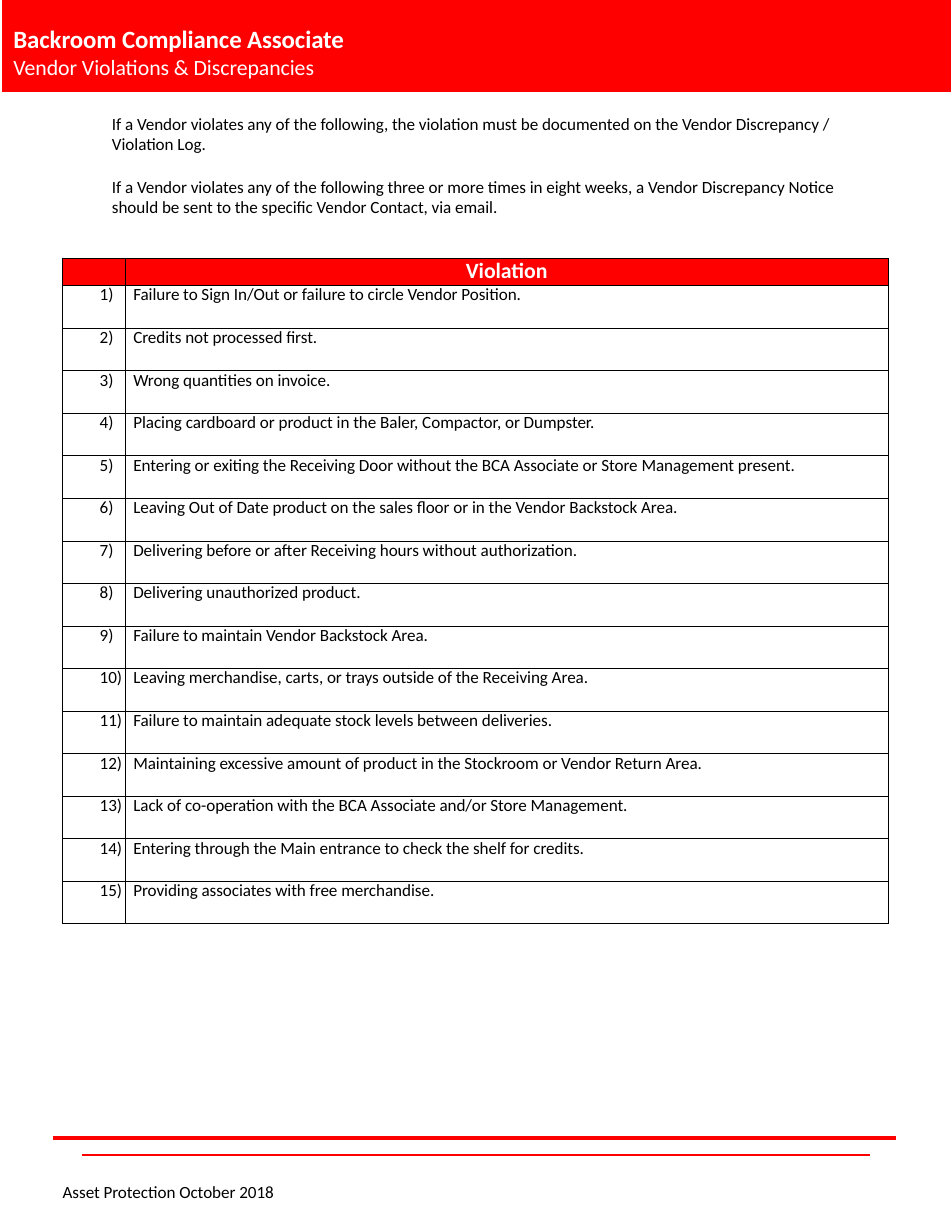
import pptx
import pptx.dml.color
import pptx.enum.shapes
import pptx.enum.text
import pptx.oxml.ns
import pptx.util
from lxml import etree

PX = 9144  # one px is a hundredth of an inch
RED, WHITE, BLACK = "FF0000", "FFFFFF", "000000"
LEFT = pptx.enum.text.PP_ALIGN.LEFT
CENTER = pptx.enum.text.PP_ALIGN.CENTER

INTRO = [
    "If a Vendor violates any of the following, the violation must be documented "
    "on the Vendor Discrepancy / Violation Log.",
    "If a Vendor violates any of the following three or more times in eight weeks, "
    "a Vendor Discrepancy Notice should be sent to the specific Vendor Contact, via email.",
]
VIOLATIONS = [
    "Failure to Sign In/Out or failure to circle Vendor Position.",
    "Credits not processed first.",
    "Wrong quantities on invoice.",
    "Placing cardboard or product in the Baler, Compactor, or Dumpster.",
    "Entering or exiting the Receiving Door without the BCA Associate or Store Management present.",
    "Leaving Out of Date product on the sales floor or in the Vendor Backstock Area.",
    "Delivering before or after Receiving hours without authorization.",
    "Delivering unauthorized product.",
    "Failure to maintain Vendor Backstock Area.",
    "Leaving merchandise, carts, or trays outside of the Receiving Area.",
    "Failure to maintain adequate stock levels between deliveries.",
    "Maintaining excessive amount of product in the Stockroom or Vendor Return Area.",
    "Lack of co-operation with the BCA Associate and/or Store Management.",
    "Entering through the Main entrance to check the shelf for credits.",
    "Providing associates with free merchandise.",
]


def px(*lengths):
    return [pptx.util.Emu(length * PX) for length in lengths]


def rgb(color):
    return pptx.dml.color.RGBColor.from_string(color)


def format_paragraph(para, size, color, bold=False, align=LEFT, indent=0):
    para.alignment = align
    properties = para._p.get_or_add_pPr()
    properties.set("marL", str(indent * PX))
    properties.set("indent", "0")
    font = para.font
    font.name, font.size, font.bold = "Calibri", pptx.util.Pt(size), bold
    font.color.rgb = rgb(color)
    # Slightly tightened letter spacing
    properties.find(pptx.oxml.ns.qn("a:defRPr")).set("spc", "-5")


def prepare_frame(frame):
    frame.word_wrap = True
    frame.auto_size = pptx.enum.text.MSO_AUTO_SIZE.NONE
    frame.vertical_anchor = pptx.enum.text.MSO_ANCHOR.TOP
    frame.margin_left, frame.margin_top = px(1, 2)
    frame.margin_right = frame.margin_bottom = 0


def add_text(page, box, lines, gap=0):
    frame = page.shapes.add_textbox(*px(*box)).text_frame
    prepare_frame(frame)
    frame.text = "\n".join(lines)
    for number, para in enumerate(frame.paragraphs):
        if number:
            para.space_before = pptx.util.Pt(gap)
        format_paragraph(para, 11, BLACK)


def add_rule(page, left, top, width, weight):
    rule = page.shapes.add_connector(
        pptx.enum.shapes.MSO_CONNECTOR.STRAIGHT, *px(left, top, left + width, top))
    rule.line.color.rgb = rgb(RED)
    rule.line.width = pptx.util.Pt(weight)
    etree.SubElement(rule._element.spPr, pptx.oxml.ns.qn("a:effectLst"))


def add_header(page, box):
    left, top, width, height = box
    band = page.shapes.add_shape(
        pptx.enum.shapes.MSO_SHAPE.RECTANGLE, *px(*box))
    band.shadow.inherit = False
    band.fill.solid()
    band.fill.fore_color.rgb = rgb(RED)
    band.line.fill.background()

    # Title and subtitle stand in front of the band
    title = page.shapes.title
    title._element.addprevious(band._element)
    title.left, title.top, title.width, title.height = px(
        left + 9, top + 19, width - 18, height - 29)
    frame = title.text_frame
    prepare_frame(frame)
    frame.text = "Backroom Compliance Associate\nVendor Violations & Discrepancies"
    heading, subtitle = frame.paragraphs
    format_paragraph(heading, 16, WHITE, bold=True)
    format_paragraph(subtitle, 14, WHITE)


def add_borders(cell):
    properties = cell._tc.get_or_add_tcPr()
    for position, side in enumerate(("lnL", "lnR", "lnT", "lnB")):
        line = etree.Element(pptx.oxml.ns.qn("a:" + side), w="6350")
        fill = etree.SubElement(line, pptx.oxml.ns.qn("a:solidFill"))
        etree.SubElement(fill, pptx.oxml.ns.qn("a:srgbClr"), val=BLACK)
        properties.insert(position, line)


def fill_cell(cell, text, is_header, indent):
    cell.margin_left = cell.margin_right = cell.margin_top = cell.margin_bottom = 0
    cell.text = text
    para = cell.text_frame.paragraphs[0]
    if is_header:
        cell.fill.solid()
        cell.fill.fore_color.rgb = rgb(RED)
        para.line_spacing = pptx.util.Pt(16.4)
        format_paragraph(para, 14, WHITE, bold=True, align=CENTER)
    else:
        cell.fill.background()
        para.line_spacing = pptx.util.Pt(12.9)
        format_paragraph(para, 11, BLACK, indent=indent)
    add_borders(cell)


def add_violations(page, box):
    number_width, header_height, row_height = 56, 24, 38
    rows = [("", "Violation")]
    rows += [(f"{number})", text) for number, text in enumerate(VIOLATIONS, 1)]
    table = page.shapes.add_table(len(rows), 2, *px(*box)).table
    table.horz_banding = table.first_row = False
    widths = px(number_width, box[2] - number_width)
    for column, width in zip(table.columns, widths):
        column.width = width
    for index, texts in enumerate(rows):
        table.rows[index].height = px(row_height if index else header_height)[0]
        for column, (text, indent) in enumerate(zip(texts, (33, 7))):
            fill_cell(table.cell(index, column), text, index == 0, indent)


def add_footer(page, box):
    left, top, width, height = box
    add_rule(page, left, top, width, 3)
    add_rule(page, left + 26, top + 15, width - 49, 1.44)
    add_text(page, (left + 8, top + 37, 194, height - 37),
             ["Asset Protection October 2018"])


def main():
    deck = pptx.Presentation()
    deck.slide_width, deck.slide_height = px(850, 1100)
    page = deck.slides.add_slide(deck.slide_layouts.get_by_name("Title Only"))
    add_header(page, (2, 0, 847, 82))
    add_text(page, (99, 99, 653, 96), INTRO, gap=14)
    add_violations(page, (56, 231, 737, 594))
    add_footer(page, (47, 1016, 753, 58))
    deck.save("out.pptx")


if __name__ == "__main__":
    main()
